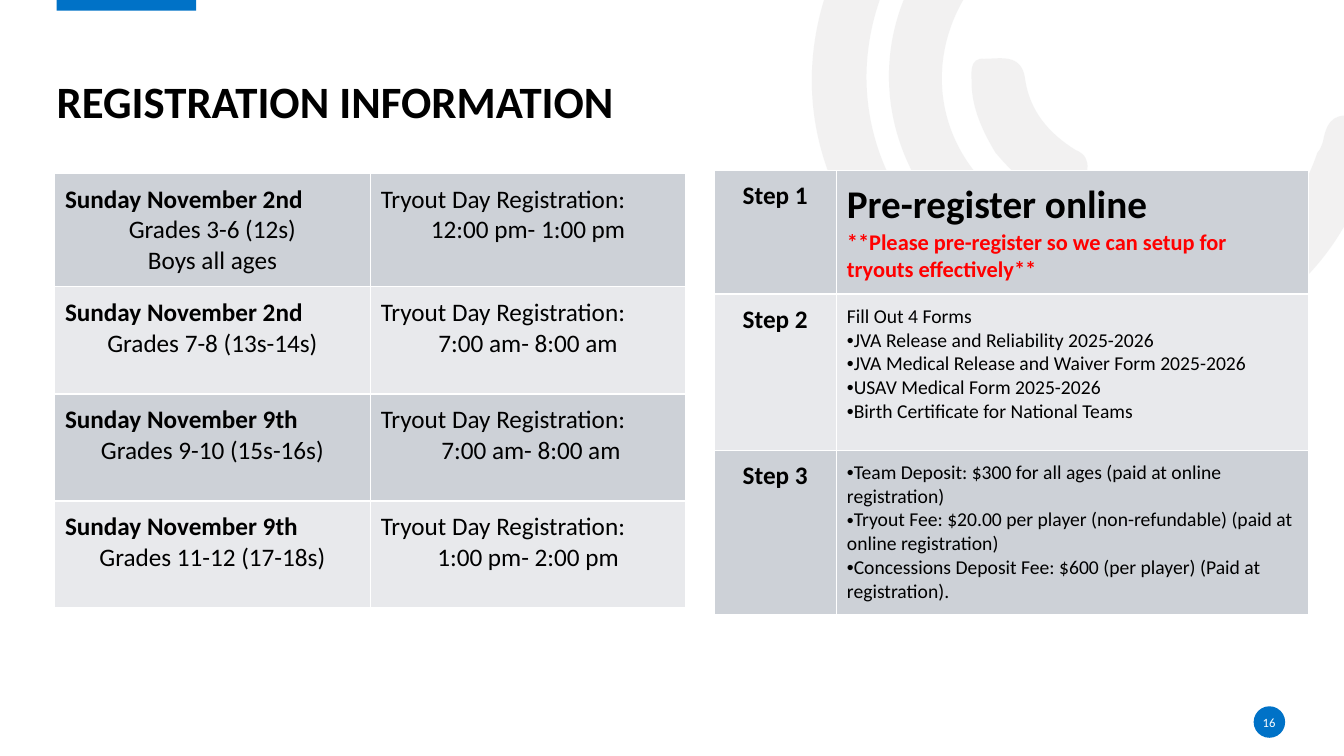
from math import cos, radians, sin

from lxml.etree import SubElement
from pptx import Presentation
from pptx.dml.color import RGBColor
from pptx.enum.shapes import MSO_SHAPE
from pptx.enum.text import MSO_ANCHOR, MSO_AUTO_SIZE, PP_ALIGN
from pptx.oxml.ns import qn
from pptx.util import Pt

THEME = {
    "font": "Calibri",
    "accent": RGBColor.from_string("0072C7"),
    "swirl": RGBColor.from_string("E7E6E6"),
    "bands": [RGBColor.from_string("CDD1D7"), RGBColor.from_string("E8E9EC")],
    "border": "FFFFFF",
    # style: size, bold, colour
    "title": (32, True, "000000"),
    "strong": (18, True, "000000"),
    "body": (18, False, "000000"),
    "headline": (28, True, "000000"),
    "warning": (16, True, "FF0000"),
    "detail": (14, False, "000000"),
    "bullet": (14, False, "000000"),
    "number": (9, False, "FFFFFF"),
}
NO_MARGINS = dict.fromkeys(["margin_left", "margin_top", "margin_right", "margin_bottom"], 0)
CELL_MARGINS = dict.fromkeys(NO_MARGINS, Pt(7.5))
LEFT, CENTER = PP_ALIGN.LEFT, PP_ALIGN.CENTER


def write_paragraphs(text_frame, lines):
    """Write (text, style, alignment) lines into a text frame."""
    for index, (text, style, alignment) in enumerate(lines):
        paragraph = text_frame.add_paragraph() if index else text_frame.paragraphs[0]
        paragraph.alignment = alignment
        if style == "bullet":
            properties = paragraph._p.get_or_add_pPr()
            properties.set("marL", "0")
            properties.set("indent", "0")
            SubElement(properties, qn("a:buFont"), typeface="Arial")
            SubElement(properties, qn("a:buChar"), char="•")
        run = paragraph.add_run()
        run.text = text
        size, bold, color = THEME[style]
        for name, value in {"name": THEME["font"], "size": Pt(size), "bold": bold}.items():
            setattr(run.font, name, value)
        run.font.color.rgb = RGBColor.from_string(color)


def add_banded_table(slide, left, top, widths, heights, rows):
    """Add a table with alternating row fills and thin borders."""
    table = slide.shapes.add_table(
        len(rows), len(widths), Pt(left), Pt(top), Pt(sum(widths)), Pt(sum(heights))
    ).table
    table.first_row = table.horz_banding = False
    for column, width in zip(table.columns, widths):
        column.width = Pt(width)
    for row_index, (height, row) in enumerate(zip(heights, rows)):
        table.rows[row_index].height = Pt(height)
        for column_index, lines in enumerate(row):
            cell = table.cell(row_index, column_index)
            for name, value in CELL_MARGINS.items():
                setattr(cell, name, value)
            properties = cell._tc.get_or_add_tcPr()
            for side in ("a:lnL", "a:lnR", "a:lnT", "a:lnB"):
                line = SubElement(properties, qn(side), w=str(Pt(1)))
                fill = SubElement(line, qn("a:solidFill"))
                SubElement(fill, qn("a:srgbClr"), val=THEME["border"])
            cell.fill.solid()
            cell.fill.fore_color.rgb = THEME["bands"][row_index % 2]
            write_paragraphs(cell.text_frame, lines)


presentation = Presentation()
presentation.slide_width, presentation.slide_height = Pt(960), Pt(540)
slide = presentation.slides.add_slide(presentation.slide_layouts[5])

# Background swirl: frame, start point, then cubic curves (two controls, end point)
swirl_outlines = [
    ((585.5, -145.5, 349, 432), (613, 165), [
        (575, 107, 567, 36, 603, -36), (641, -109, 703, -146, 785, -149),
        (796, -149, 807, -151, 814, -140), (824, -126, 811, -111, 791, -111),
        (696, -111, 623, -42, 619, 49), (616, 130, 674, 202, 753, 217),
        (835, 233, 914, 188, 941, 109), (943, 107, 944, 104, 945, 101),
        (948, 84, 955, 80, 971, 84), (989, 89, 984, 102, 980, 112),
        (964, 176, 920, 223, 858, 246), (770, 279, 674, 248, 613, 165)]),
    ((648.5, -56, 153.5, 306.5), (664, 143), [
        (621, 83, 626, 5, 677, -49), (685, -57, 693, -68, 706, -56),
        (716, -46, 718, -36, 705, -23), (666, 19, 662, 78, 695, 121),
        (726, 165, 783, 179, 836, 155), (851, 148, 859, 153, 866, 165),
        (874, 180, 862, 184, 852, 189), (789, 223, 708, 203, 664, 143)]),
    ((705.5, 26.5, 56, 132), (711, 109), [
        (702, 94, 694, 77, 694, 59), (694, 53, 692, 41, 703, 42),
        (714, 42, 729, 38, 732, 55), (735, 79, 749, 95, 768, 107),
        (783, 113, 775, 127, 772, 136), (769, 148, 760, 143, 752, 140),
        (735, 135, 722, 122, 711, 109)]),
]
swirl_angle = 144.2
cosine, sine = cos(radians(swirl_angle)), sin(radians(swirl_angle))
for (left, top, width, height), start, curves in swirl_outlines:
    builder = slide.shapes.build_freeform(Pt(left), Pt(top))
    builder.add_line_segments([(Pt(left + width), Pt(top + height))], close=True)
    swirl = builder.convert_to_shape()
    swirl.rotation = swirl_angle
    swirl.shadow.inherit = False
    swirl.line.fill.background()
    swirl.fill.solid()
    swirl.fill.fore_color.rgb = THEME["swirl"]
    color = swirl._element.spPr.find(".//" + qn("a:srgbClr"))
    SubElement(color, qn("a:alpha"), val="53000")
    # Curves, turned back into the unrotated frame
    outline = swirl._element.spPr.find(".//" + qn("a:path"))
    for segment in list(outline):
        outline.remove(segment)
    for tag, values in [("a:moveTo", start)] + [("a:cubicBezTo", curve) for curve in curves]:
        segment = SubElement(outline, qn(tag))
        for x, y in zip(values[::2], values[1::2]):
            dx, dy = x - left - width / 2, y - top - height / 2
            SubElement(segment, qn("a:pt"),
                       x=str(Pt(width / 2 + dx * cosine + dy * sine)),
                       y=str(Pt(height / 2 - dx * sine + dy * cosine)))
    SubElement(outline, qn("a:close"))

# Accent bar and page number disc
for preset, left, top, width, height, angle in [
    (MSO_SHAPE.RECTANGLE, 40.5, -1.5, 99.5, 9, 180),
    (MSO_SHAPE.OVAL, 895.5, 504.5, 22.5, 22.5, 0),
]:
    shape = slide.shapes.add_shape(preset, Pt(left), Pt(top), Pt(width), Pt(height))
    shape.rotation = angle
    shape.shadow.inherit = False
    shape.line.fill.background()
    shape.fill.solid()
    shape.fill.fore_color.rgb = THEME["accent"]

# Title, in front of the swirl
title = slide.shapes.title
title.element.getparent().append(title.element)
for name, value in {"left": 40.5, "top": 19.2, "width": 877.5, "height": 72.5}.items():
    setattr(title, name, Pt(value))
frame_format = {**NO_MARGINS, "word_wrap": True, "auto_size": MSO_AUTO_SIZE.NONE}
for name, value in {**frame_format, "vertical_anchor": MSO_ANCHOR.BOTTOM}.items():
    setattr(title.text_frame, name, value)
write_paragraphs(title.text_frame, [("REGISTRATION INFORMATION", "title", LEFT)])
title.text_frame.paragraphs[0].line_spacing = 0.9

# Tryout schedule
schedule = [
    ("Sunday November 2nd", ["Grades 3-6 (12s)", "Boys all ages"], "12:00 pm- 1:00 pm"),
    ("Sunday November 2nd", ["Grades 7-8 (13s-14s)"], "7:00 am- 8:00 am"),
    ("Sunday November 9th", ["Grades 9-10 (15s-16s)"], " 7:00 am- 8:00 am"),
    ("Sunday November 9th", ["Grades 11-12 (17-18s)"], "1:00 pm- 2:00 pm"),
]
schedule_rows = [
    [
        [(day, "strong", LEFT)] + [(group, "body", CENTER) for group in groups],
        [("Tryout Day Registration:", "body", LEFT), (time, "body", CENTER)],
    ]
    for day, groups, time in schedule
]
add_banded_table(slide, 39, 124, [225.5, 225.5], [76.5] * 4, schedule_rows)

# Page number
number_box = slide.shapes.add_textbox(Pt(895), Pt(508.5), Pt(23), Pt(14.5))
for name, value in {**frame_format, "vertical_anchor": MSO_ANCHOR.MIDDLE}.items():
    setattr(number_box.text_frame, name, value)
write_paragraphs(number_box.text_frame, [("16", "number", CENTER)])

# Registration steps
steps = [
    [("Pre-register online", "headline"),
     ("**Please pre-register so we can setup for tryouts effectively**", "warning")],
    [("Fill Out 4 Forms", "detail"),
     ("JVA Release and Reliability 2025-2026", "bullet"),
     ("JVA Medical Release and Waiver Form 2025-2026", "bullet"),
     ("USAV Medical Form 2025-2026", "bullet"),
     ("Birth Certificate for National Teams", "bullet")],
    [("Team Deposit: $300 for all ages (paid at online registration)", "bullet"),
     ("Tryout Fee: $20.00 per player (non-refundable) (paid at online registration)", "bullet"),
     ("Concessions Deposit Fee: $600 (per player) (Paid at registration).", "bullet")],
]
step_rows = [
    [[(f"Step {number}", "strong", CENTER)], [(text, style, LEFT) for text, style in lines]]
    for number, lines in enumerate(steps, start=1)
]
add_banded_table(slide, 510, 121.7, [87.5, 337], [88, 111.5, 111.5], step_rows)

presentation.save("out.pptx")
